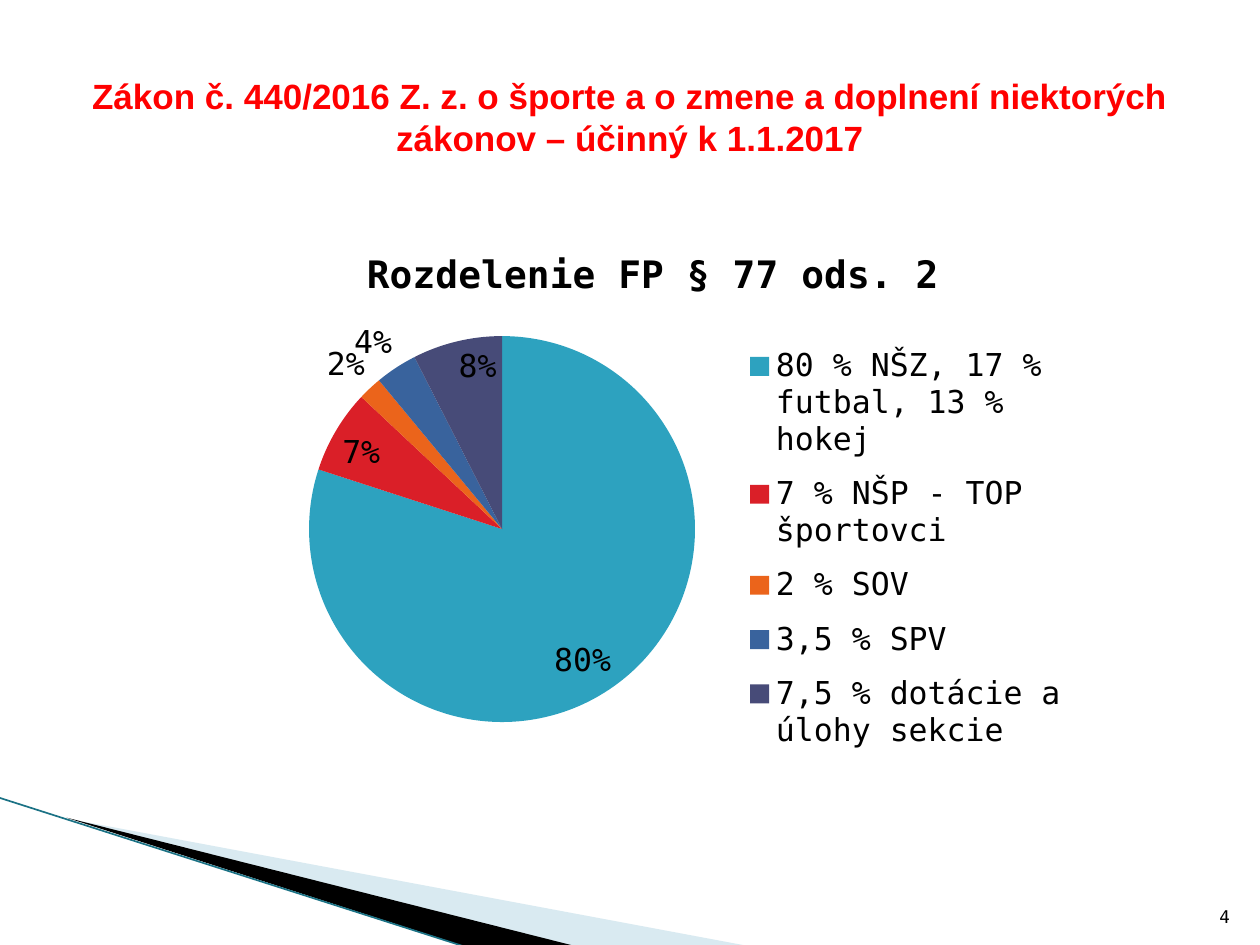
"""Builds the slide on the split of sport funding as a pie chart."""
from lxml.etree import SubElement
from pptx import Presentation
from pptx.chart.data import CategoryChartData as Data
from pptx.dml.color import RGBColor
from pptx.enum.chart import XL_CHART_TYPE as Kind, XL_LABEL_POSITION as Spot, XL_LEGEND_POSITION as Side
from pptx.enum.shapes import MSO_CONNECTOR as Link
from pptx.enum.text import MSO_ANCHOR as Anchor, PP_ALIGN as Align
from pptx.oxml import parse_xml
from pptx.oxml.ns import nsdecls, qn
from pptx.util import Inches, Pt

MONO = "DejaVu Sans Mono"
rgb = RGBColor.from_string


def write(frame, text, size=18, font=MONO, color="000000", bold=False, align=Align.CENTER, anchor=Anchor.MIDDLE):
    frame.text = text
    frame.word_wrap = True
    frame.vertical_anchor = anchor
    para = frame.paragraphs[0]
    para.alignment = align
    face = para.runs[0].font
    face.size, face.name, face.bold = Pt(size), font, bold
    face.color.rgb = rgb(color)


def layout(x, y, w, h, inner=""):
    return parse_xml(
        f'<c:layout {nsdecls("c")}><c:manualLayout>{inner}<c:xMode val="edge"/><c:yMode val="edge"/>'
        f'<c:x val="{x}"/><c:y val="{y}"/><c:w val="{w}"/><c:h val="{h}"/></c:manualLayout></c:layout>')


deck = Presentation()
deck.slide_width, deck.slide_height = Inches(10), Inches(7.5)
slide = deck.slides.add_slide(deck.slide_layouts[5])
shapes = slide.shapes

wedges = [
    ("A0CBDC", 40, [(0.55, 6.5), (5.95, 7.51), (4.56, 7.51)]),
    ("000000", 100, [(0.53, 6.49), (4.57, 7.51), (3.72, 7.52)]),
]
for color, alpha, points in wedges:
    spots = [(Inches(x), Inches(y)) for x, y in points]
    path = shapes.build_freeform(*spots[0])
    path.add_line_segments(spots[1:])
    wedge = path.convert_to_shape()
    wedge.shadow.inherit = False
    wedge.fill.solid()
    wedge.fill.fore_color.rgb = rgb(color)
    wedge.line.fill.background()
    if alpha < 100:
        tint = wedge.fill._xPr.find(".//" + qn("a:srgbClr"))
        SubElement(tint, qn("a:alpha"), val=str(alpha * 1000))

edge = shapes.add_connector(Link.STRAIGHT, Inches(-0.01), Inches(6.33), Inches(3.71), Inches(7.52))
edge.line.color.rgb = rgb("1B7285")
edge.line.width = Pt(0.95)
SubElement(edge._element.spPr, qn("a:effectLst"))

title = shapes.title
title.left, title.top, title.width, title.height = [Inches(n) for n in (0.5, 0.3, 9, 1.25)]
write(title.text_frame, "Zákon č. 440/2016 Z. z. o športe a o zmene a doplnení niektorých zákonov – účinný k 1.1.2017",
      size=20, font="Arial", color="FF0000", bold=True)

parts = [
    ("80 % NŠZ, 17 % futbal, 13 % hokej", 0.8, "2DA2BF", Spot.INSIDE_END),
    ("7 % NŠP - TOP športovci", 0.07, "DA1F28", Spot.INSIDE_END),
    ("2 % SOV", 0.02, "EB641B", Spot.OUTSIDE_END),
    ("3,5 % SPV", 0.035, "39639D", Spot.OUTSIDE_END),
    ("7,5 % dotácie a úlohy sekcie", 0.075, "474B78", Spot.INSIDE_END),
]
data = Data(number_format="0%")
data.categories = [part[0] for part in parts]
data.add_series("Series 1", [part[1] for part in parts])
chart = shapes.add_chart(Kind.PIE, Inches(1.85), Inches(1.78), Inches(6.67), Inches(4.44), data).chart
chart.font.size, chart.font.name = Pt(18), MONO
chart.font.color.rgb = rgb("000000")
chart.has_title = True
write(chart.chart_title.text_frame, "Rozdelenie FP § 77 ods. 2", size=21.6, bold=True)

chart.has_legend = True
legend = chart.legend
legend.position = Side.RIGHT
legend.include_in_layout = False
legend._element.find(qn("c:legendPos")).addnext(layout(0.6, 0.19, 0.4, 0.78))
area = chart._chartSpace.chart.plotArea
for old in area.findall(qn("c:layout")):
    area.remove(old)
area.insert(0, layout(0.09, 0.2, 0.46, 0.69, '<c:layoutTarget val="inner"/>'))

plot = chart.plots[0]
plot.vary_by_categories = True
pie = plot.series[0]
labels = pie.data_labels
labels.show_value = True
labels.number_format, labels.number_format_is_linked = "0%", False
for i, (name, share, color, spot) in enumerate(parts):
    slice = pie.points[i]
    slice.format.fill.solid()
    slice.format.fill.fore_color.rgb = rgb(color)
    slice.data_label.position = spot

page = shapes.add_textbox(Inches(9.46), Inches(7.01), Inches(0.4), Inches(0.4))
write(page.text_frame, "4", size=10, align=Align.RIGHT, anchor=Anchor.BOTTOM)

deck.save("out.pptx")
